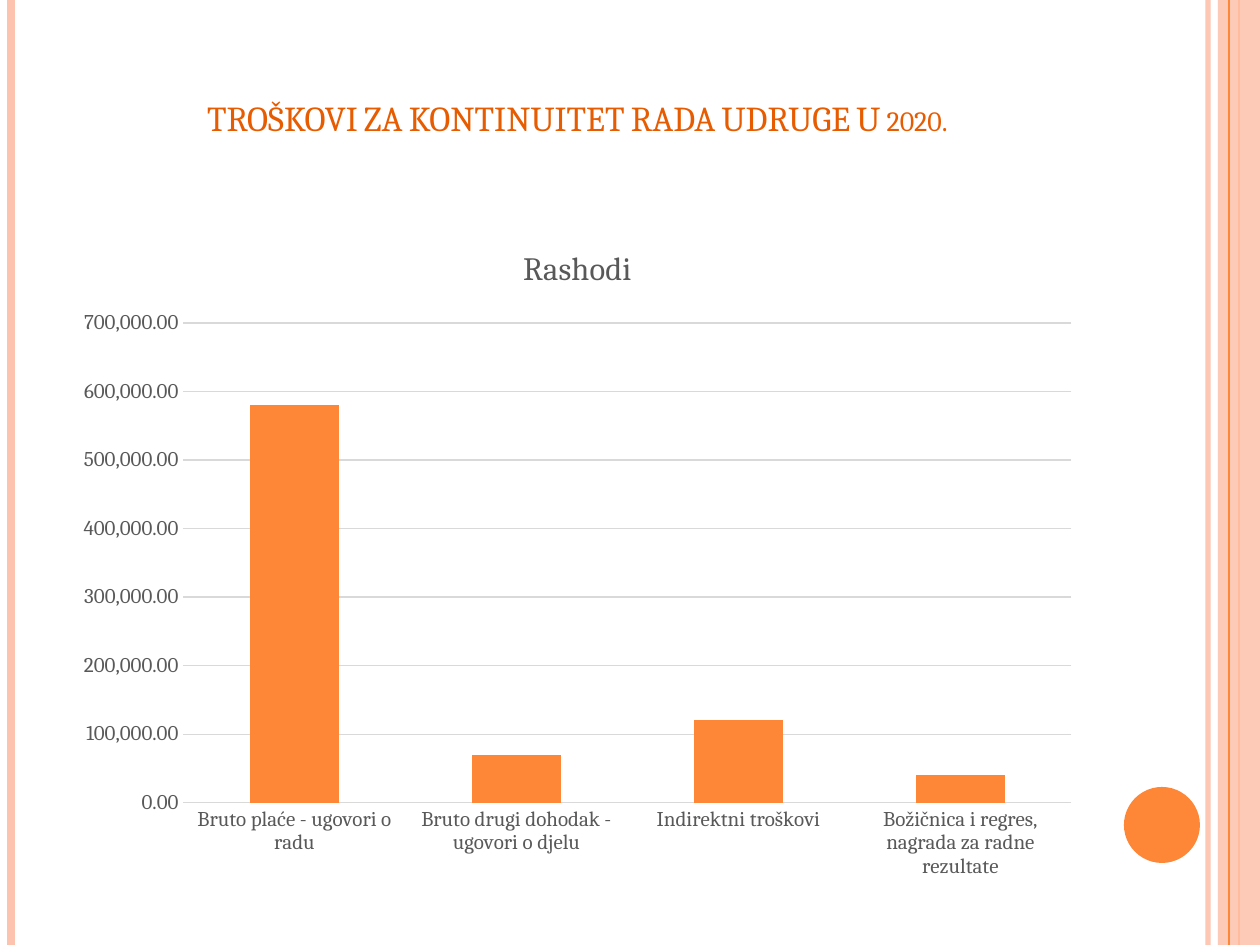
"""Build the slide on the association's running costs in 2020."""
from dataclasses import dataclass

from lxml import etree
from pptx import Presentation
from pptx import util as u
from pptx.chart.data import CategoryChartData
from pptx.dml.color import RGBColor
from pptx.enum import chart as ch, shapes, text
from pptx.oxml.ns import qn


@dataclass(frozen=True)
class Theme:
    font: str = "Cambria"
    main: str = "FE8637"
    pale: str = "FEC3AE"
    head: str = "E75C01"
    grey: str = "595959"
    grid: str = "D9D9D9"
    bars: tuple = ("FE8637", "7598D9", "B32C16")
    title: int = 20
    label: float = 18.6
    axis: int = 12


T = Theme()
CATS = (
    "Bruto plaće - ugovori o radu",
    "Bruto drugi dohodak - ugovori o djelu",
    "Indirektni troškovi",
    "Božičnica i regres, nagrada za radne rezultate",
)
ROWS = (
    ("Series 1", (580000, 70000, 120000, 40000)),
    ("Series 2", (0, 0, 0, 0)),
    ("Series 3", (0, 0, 0, 0)),
)


def px(n):
    return u.Emu(round(n * 914400 / 126))


def rgb(code):
    return RGBColor.from_string(code)


def style(font, size, color):
    font.name, font.size, font.bold = T.font, u.Pt(size), False
    font.color.rgb = rgb(color)


def fade(fill, pct):
    node = fill._xPr.find(qn("a:solidFill"))[0]
    etree.SubElement(node, qn("a:alpha")).set("val", str(pct * 1000))


def add_rule(slide, x, color, width, pct=100):
    rule = slide.shapes.add_connector(
        shapes.MSO_CONNECTOR.STRAIGHT, px(x), 0, px(x), px(945))
    rule.line.color.rgb = rgb(color)
    rule.line.width = u.Pt(width)
    if pct < 100:
        fade(rule.line.fill, pct)
    etree.SubElement(rule._element.spPr, qn("a:effectLst"))


def add_form(slide, kind, box, color, pct=100):
    form = slide.shapes.add_shape(kind, *map(px, box))
    form.shadow.inherit = False
    form.fill.solid()
    form.fill.fore_color.rgb = rgb(color)
    form.line.fill.background()
    if pct < 100:
        fade(form.fill, pct)


def set_title(slide, words, box):
    title = slide.shapes.title
    title.left, title.top, title.width, title.height = map(px, box)
    frame = title.text_frame
    frame.word_wrap = True
    frame.auto_size = text.MSO_AUTO_SIZE.NONE
    frame.vertical_anchor = text.MSO_ANCHOR.BOTTOM
    para = frame.paragraphs[0]
    para.alignment = text.PP_ALIGN.CENTER
    run = para.add_run()
    run.text = words
    style(run.font, T.title, T.head)
    run.font._element.set("cap", "small")


def set_axis(axis):
    axis.major_tick_mark = axis.minor_tick_mark = ch.XL_TICK_MARK.NONE
    axis.format.line.fill.background()
    style(axis.tick_labels.font, T.axis, T.grey)


def add_bars(slide, name, box):
    data = CategoryChartData(number_format="#,##0.00")
    data.categories = CATS
    for label, vals in ROWS:
        data.add_series(label, vals)
    chart = slide.shapes.add_chart(
        ch.XL_CHART_TYPE.COLUMN_STACKED, *map(px, box), data).chart
    style(chart.font, T.axis, T.grey)
    chart.has_legend = False
    chart.has_title = True
    run = chart.chart_title.text_frame.paragraphs[0].add_run()
    run.text = name
    style(run.font, T.label, T.grey)
    plot = chart.plots[0]
    plot.gap_width, plot.overlap = 150, 100
    plot.vary_by_categories = False
    for row, color in zip(plot.series, T.bars):
        row.format.fill.solid()
        row.format.fill.fore_color.rgb = rgb(color)
    set_axis(chart.category_axis)
    axis = chart.value_axis
    set_axis(axis)
    axis.minimum_scale, axis.maximum_scale, axis.major_unit = 0, 700000, 100000
    axis.tick_labels.number_format = "#,##0.00"
    axis.tick_labels.number_format_is_linked = False
    grid = axis.major_gridlines.format.line
    grid.color.rgb = rgb(T.grid)
    grid.width = u.Pt(0.75)


def main():
    deck = Presentation()
    deck.slide_width, deck.slide_height = px(1260), px(945)
    slide = deck.slides.add_slide(deck.slide_layouts[5])
    add_rule(slide, 1208, T.pale, 3, 93)
    add_rule(slide, 11, T.pale, 4.5)
    add_rule(slide, 1239, T.main, 0.75)
    add_form(slide, shapes.MSO_SHAPE.RECTANGLE, (1218, 0, 42, 945), T.pale, 87)
    add_rule(slide, 1229, T.main, 0.75)
    add_form(slide, shapes.MSO_SHAPE.OVAL, (1124, 787, 76, 76), T.main)
    set_title(slide, "TROŠKOVI ZA KONTINUITET RADA UDRUGE U 2020.",
              (63, 38, 1029, 107))
    add_bars(slide, "Rashodi", (63, 220, 1029, 672))
    deck.save("out.pptx")


if __name__ == "__main__":
    main()
